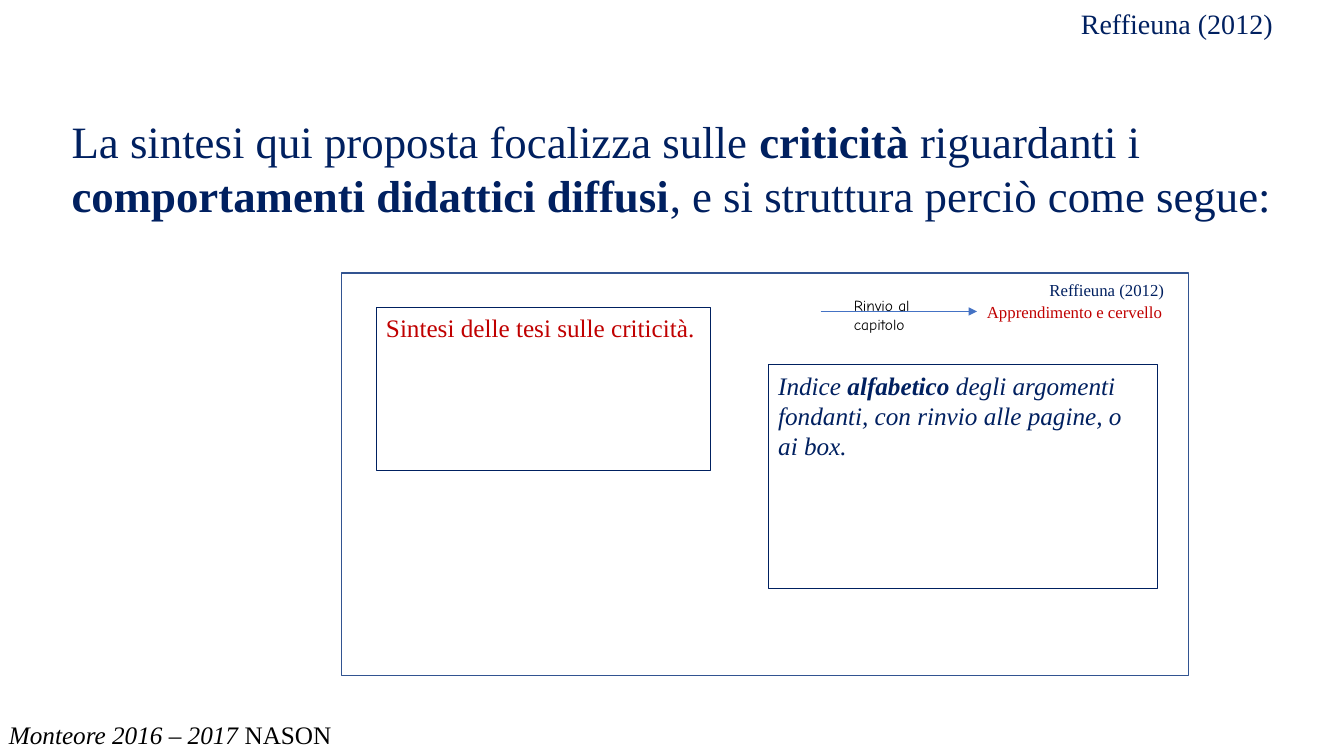
from dataclasses import dataclass

from lxml import etree
from pptx import Presentation
from pptx.dml.color import RGBColor
from pptx.enum.shapes import MSO_CONNECTOR, MSO_SHAPE
from pptx.enum.text import MSO_ANCHOR, MSO_AUTO_SIZE, PP_ALIGN
from pptx.oxml.ns import qn
from pptx.util import Inches, Pt

RECTANGLE = MSO_SHAPE.RECTANGLE
STRAIGHT = MSO_CONNECTOR.STRAIGHT
TOP = MSO_ANCHOR.TOP
LEFT = PP_ALIGN.LEFT
NO_FIT = MSO_AUTO_SIZE.NONE
LEFT_SIDE = 1


@dataclass(frozen=True)
class Theme:
    navy: RGBColor = RGBColor(0x00, 0x20, 0x60)
    red: RGBColor = RGBColor(0xC0, 0x00, 0x00)
    black: RGBColor = RGBColor(0x00, 0x00, 0x00)
    frame: RGBColor = RGBColor(0x32, 0x54, 0x91)
    arrow: RGBColor = RGBColor(0x44, 0x72, 0xC4)
    serif: str = "Times New Roman"
    comic: str = "Comic Neue"
    statement: int = 32
    source: int = 20
    body: int = 18
    small: int = 12
    caption: int = 11


theme = Theme()


def write(shape, *runs, size, color, font=theme.serif, spacing=1.0):
    """Fill a shape with runs given as (text, style), style holding b and/or i."""
    frame = shape.text_frame
    frame.word_wrap = True
    frame.auto_size = NO_FIT
    frame.vertical_anchor = TOP
    paragraph = frame.paragraphs[0]
    paragraph.alignment = LEFT
    paragraph.line_spacing = spacing
    for text, style in runs:
        run = paragraph.add_run()
        run.text = text
        run.font.name = font
        run.font.size = Pt(size)
        run.font.color.rgb = color
        run.font.bold = "b" in style
        run.font.italic = "i" in style


def outlined_box(left, top, width, height, color, weight):
    box = slide.shapes.add_shape(
        RECTANGLE, Inches(left), Inches(top), Inches(width), Inches(height))
    box.shadow.inherit = False
    box.fill.background()
    box.line.color.rgb = color
    box.line.width = Pt(weight)
    return box


prs = Presentation()
prs.slide_width = Inches(13.33)
prs.slide_height = Inches(7.5)
slide = prs.slides.add_slide(prs.slide_layouts[0])

# Statement and source, in the title and subtitle placeholders
statement = slide.shapes.title
source = slide.placeholders[1]
for holder, (left, top, width, height) in (
        (statement, (0.61, 1.08, 12.21, 1.18)),
        (source, (10.62, 0.05, 2.64, 0.47))):
    holder.left, holder.top = Inches(left), Inches(top)
    holder.width, holder.height = Inches(width), Inches(height)

write(statement,
      ("La sintesi qui proposta focalizza sulle ", ""),
      ("criticità ", "b"),
      ("riguardanti i ", ""),
      ("comportamenti didattici diffusi", "b"),
      (", e si struttura perciò come segue:", ""),
      size=theme.statement, color=theme.navy)
write(source, ("Reffieuna (2012)", ""),
      size=theme.source, color=theme.navy, spacing=0.9)

# Footer
footer = slide.shapes.add_textbox(
    Inches(-0.01), Inches(7.09), Inches(3.63), Inches(0.4))
write(footer, ("Monteore 2016 – 2017 ", "i"), ("NASON", ""),
      size=theme.body, color=theme.black)

# Frame of the sample page
outlined_box(3.39, 2.71, 8.4, 3.99, theme.frame, 1)

# Heading of the sample page: source and chapter
sample_source = slide.shapes.add_textbox(
    Inches(10.31), Inches(2.75), Inches(1.47), Inches(0.3))
write(sample_source, ("Reffieuna (2012)", ""),
      size=theme.small, color=theme.navy, spacing=0.9)
chapter = slide.shapes.add_textbox(
    Inches(9.69), Inches(2.97), Inches(2.17), Inches(0.24))
write(chapter, ("Apprendimento e cervello", ""),
      size=theme.small, color=theme.red, spacing=0.9)

# Arrow to the chapter, with its caption
chapter_arrow = slide.shapes.add_connector(
    STRAIGHT, Inches(8.14), Inches(3.09), Inches(9.69), Inches(3.09))
chapter_arrow.end_connect(chapter, LEFT_SIDE)
chapter_arrow.line.color.rgb = theme.arrow
chapter_arrow.line.width = Pt(0.5)
arrow_line = chapter_arrow.line._get_or_add_ln()
etree.SubElement(arrow_line, qn("a:tailEnd"), type="triangle")
etree.SubElement(chapter_arrow._element.spPr, qn("a:effectLst"))

reference = slide.shapes.add_textbox(
    Inches(8.37), Inches(2.89), Inches(1.03), Inches(0.47))
write(reference, ("Rinvio al capitolo", ""),
      size=theme.caption, color=theme.black, font=theme.comic)

# Content boxes of the sample page
theses = outlined_box(3.73, 3.05, 3.32, 1.62, theme.navy, 0.75)
write(theses, ("Sintesi delle tesi sulle criticità.", ""),
      size=theme.body, color=theme.red)
index = outlined_box(7.62, 3.62, 3.86, 2.22, theme.navy, 0.75)
write(index,
      ("Indice ", "i"),
      ("alfabetico", "bi"),
      (" degli argomenti fondanti, con rinvio alle pagine, o ai box.", "i"),
      size=theme.body, color=theme.navy)

prs.save("out.pptx")
